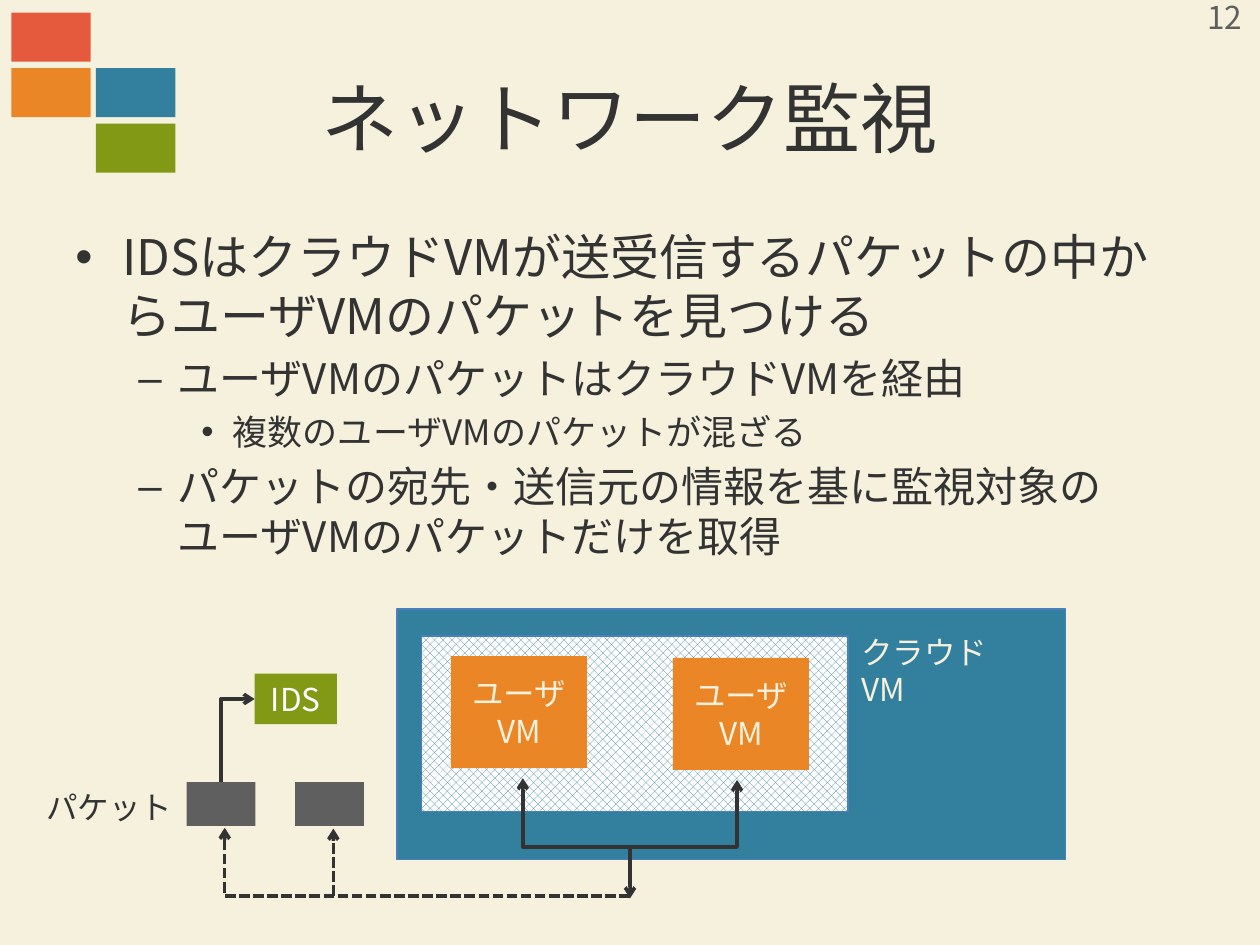
from dataclasses import dataclass

from lxml.etree import SubElement
from pptx import Presentation
from pptx.dml.color import RGBColor
from pptx.enum.dml import MSO_LINE, MSO_PATTERN
from pptx.enum.shapes import MSO_CONNECTOR, MSO_SHAPE
from pptx.enum.text import MSO_ANCHOR, PP_ALIGN
from pptx.oxml.ns import qn
from pptx.util import Pt


@dataclass(frozen=True)
class Theme:
    font: str = "Noto Sans CJK JP"
    paper: str = "F5F1DD"
    ink: str = "333333"
    gray: str = "5F5F5F"
    white: str = "FFFFFF"
    red: str = "E5593C"
    orange: str = "EB8627"
    blue: str = "327F9E"
    green: str = "829916"
    border: str = "4B7EBC"
    title: int = 44
    levels: tuple = (28, 24, 20)
    label: int = 18


T = Theme()
# left margin, hanging indent and bullet for each level
OUTLINE = ((27, 27, "•"), (58.5, 22.5, "–"), (90, 18, "•"))
BODY = (
    (0, "IDSはクラウドVMが送受信するパケットの中からユーザVMのパケットを見つける"),
    (1, "ユーザVMのパケットはクラウドVMを経由"),
    (2, "複数のユーザVMのパケットが混ざる"),
    (1, "パケットの宛先・送信元の情報を基に監視対象のユーザVMのパケットだけを取得"),
)


def rgb(color):
    return RGBColor.from_string(color)


def write(p, text, *, size=T.label, color=T.ink, align=PP_ALIGN.LEFT):
    """Fill a paragraph; a vertical tab in the text is a line break."""
    p.text = text
    p.alignment = align
    for r in p.runs:
        r.font.size = Pt(size)
        r.font.color.rgb = rgb(color)
        r.font.name = T.font
        SubElement(r._r.get_or_add_rPr(), qn("a:ea"), typeface=T.font)


def add_text(s, box, text, *, wrap=True, anchor=MSO_ANCHOR.TOP, **fmt):
    tf = s.shapes.add_textbox(*map(Pt, box)).text_frame
    tf.word_wrap = wrap
    tf.vertical_anchor = anchor
    write(tf.paragraphs[0], text, **fmt)


def add_outline(s, box, items):
    tf = s.shapes.add_textbox(*map(Pt, box)).text_frame
    tf.word_wrap = True
    for i, (level, text) in enumerate(items):
        p = tf.add_paragraph() if i else tf.paragraphs[0]
        size = T.levels[level]
        write(p, text, size=size)
        p.level = level
        p.space_before = Pt(size * 0.2)
        margin, hang, bullet = OUTLINE[level]
        pPr = p._p.get_or_add_pPr()
        pPr.set("marL", str(Pt(margin)))
        pPr.set("indent", str(-Pt(hang)))
        SubElement(pPr, qn("a:buFont"), typeface="Arial")
        SubElement(pPr, qn("a:buChar"), char=bullet)


def add_box(s, box, fill, *, line=None, text=None, wrap=True, **fmt):
    sp = s.shapes.add_shape(MSO_SHAPE.RECTANGLE, *map(Pt, box))
    sp.shadow.inherit = False
    sp.fill.solid()
    sp.fill.fore_color.rgb = rgb(fill)
    if line:
        sp.line.color.rgb = rgb(line)
        sp.line.width = Pt(0.75)
    else:
        sp.line.fill.background()
    if text:
        tf = sp.text_frame
        tf.word_wrap = wrap
        tf.vertical_anchor = MSO_ANCHOR.MIDDLE
        write(tf.paragraphs[0], text, align=PP_ALIGN.CENTER, **fmt)
    return sp


def add_arrow(s, start, end, *, kind=MSO_CONNECTOR.STRAIGHT, heads=("tailEnd",), dashed=False):
    c = s.shapes.add_connector(kind, *map(Pt, start + end))
    c.line.color.rgb = rgb(T.ink)
    c.line.width = Pt(2)
    if dashed:
        c.line.dash_style = MSO_LINE.SQUARE_DOT
    ln = c.line._get_or_add_ln()
    for head in heads:
        SubElement(ln, qn(f"a:{head}"), type="arrow")
    SubElement(c._element.spPr, qn("a:effectLst"))
    return c


def add_elbow(s, box, preset, rotation, *, flip=None, bend=None, **style):
    """Bent arrow; box is its frame before the rotation in degrees."""
    x, y, w, h = box
    c = add_arrow(s, (x, y), (x + w, y + h), kind=MSO_CONNECTOR.ELBOW, **style)
    spPr = c._element.spPr
    xfrm = spPr.find(qn("a:xfrm"))
    xfrm.set("rot", str(rotation * 60000))
    if flip:
        xfrm.set(flip, "1")
    geom = spPr.find(qn("a:prstGeom"))
    geom.set("prst", preset)
    if bend is not None:
        guides = geom.find(qn("a:avLst"))
        SubElement(guides, qn("a:gd"), name="adj1", fmla=f"val {round(bend * 100000)}")


def add_corner_tiles(s):
    for col, row, color in ((0, 0, T.red), (1, 2, T.green), (1, 1, T.blue), (0, 1, T.orange)):
        add_box(s, (6.5 + 48.3 * col, 7.2 + 31.7 * row, 45.4, 28.1), color)


def add_ids_side(s):
    add_box(s, (145.5, 385, 47, 28.8), T.green, text="IDS", wrap=False, color=T.white)
    for x in (106.6, 168.6):
        add_box(s, (x, 447, 39.4, 25), T.gray)
    add_elbow(s, (128.4, 473, 231.6, 38.9), "bentConnector2", 180, dashed=True)
    add_arrow(s, (190.5, 511.9), (190.5, 473.5), dashed=True)
    add_elbow(s, (126.2, 399.4, 19.3, 47.6), "bentConnector2", 180,
              flip="flipV", heads=("headEnd",))
    add_text(s, (19.4, 447, 87, 29), "パケット", wrap=False)


def add_cloud_vm(s):
    add_box(s, (226.8, 348, 382.2, 143), T.blue, line=T.border)
    host = add_box(s, (241, 363.4, 243.6, 100.2), T.white, line=T.border)
    host.fill.patterned()
    host.fill.pattern = MSO_PATTERN.PERCENT_50
    host.fill.fore_color.rgb = rgb(T.blue)
    host.fill.back_color.rgb = rgb(T.white)
    for x, y in ((257.6, 375), (384.5, 376)):
        add_box(s, (x, y, 77.8, 64), T.orange, text="ユーザVM", color=T.paper)
    add_elbow(s, (359.5, 384, 1, 122.4), "bentConnector3", 270,
              flip="flipH", bend=39.6, heads=("headEnd", "tailEnd"))
    add_text(s, (485.1, 358, 114.5, 29), "クラウド\vVM", wrap=False, color=T.paper)
    add_arrow(s, (360, 484), (360, 513.4))


def main():
    prs = Presentation()
    prs.slide_width, prs.slide_height = Pt(720), Pt(540)
    s = prs.slides.add_slide(prs.slide_layouts[6])
    s.background.fill.solid()
    s.background.fill.fore_color.rgb = rgb(T.paper)

    add_corner_tiles(s)
    add_text(s, (36, 21.6, 648, 90), "ネットワーク監視", size=T.title,
             anchor=MSO_ANCHOR.MIDDLE, align=PP_ALIGN.CENTER)
    add_outline(s, (36, 126, 648, 356.4), BODY)
    add_text(s, (673.2, -1.4, 53.3, 21.6), "12", color=T.gray,
             anchor=MSO_ANCHOR.MIDDLE, align=PP_ALIGN.CENTER)
    add_ids_side(s)
    add_cloud_vm(s)
    prs.save("out.pptx")


if __name__ == "__main__":
    main()
